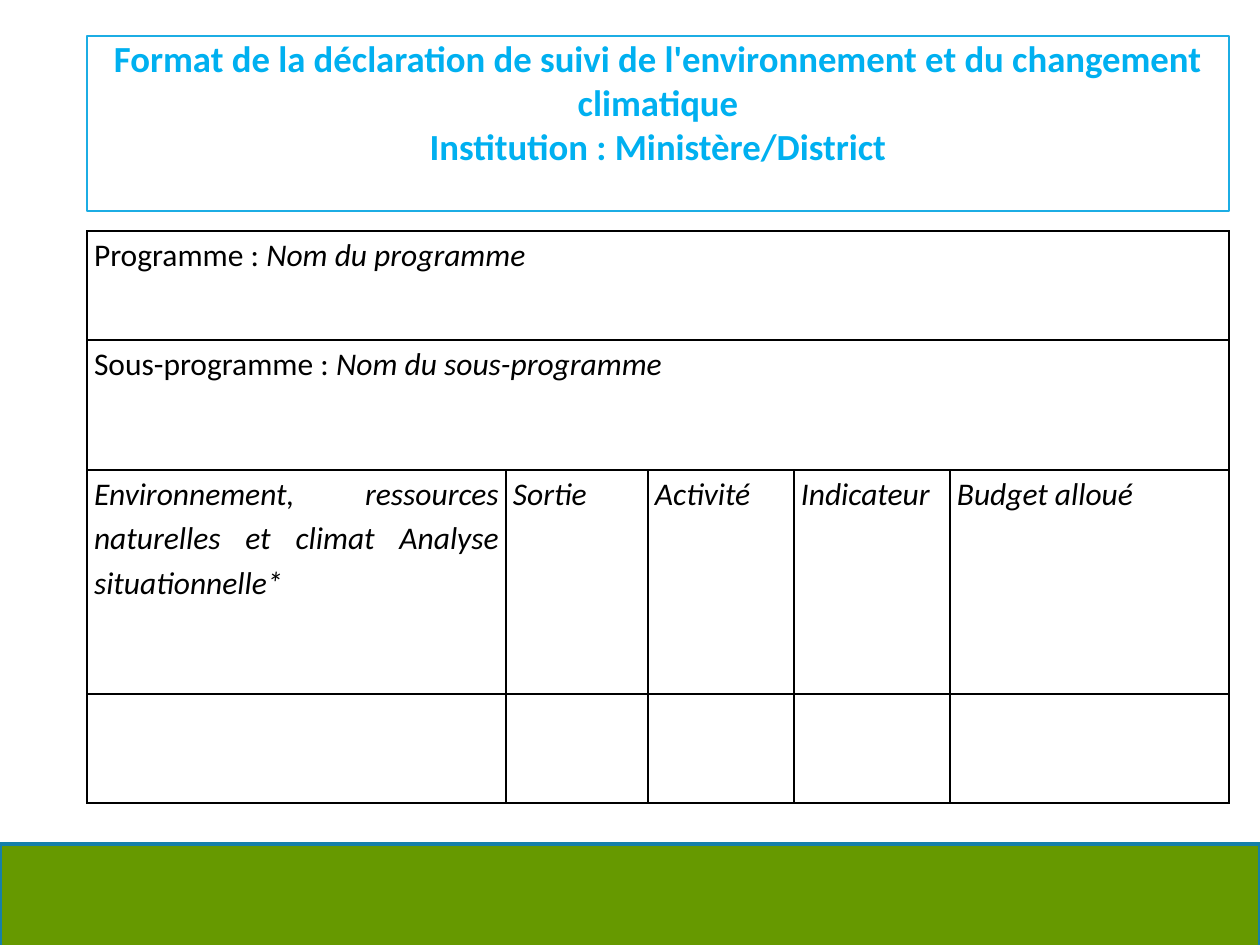
from dataclasses import dataclass

from lxml import etree
from pptx import Presentation, util as u
from pptx.dml.color import RGBColor
from pptx.enum import shapes, text
from pptx.oxml import ns

PX = 914400 / 126
FONT = "Calibri"
COLORS = {
    "heading": "00B0F0",
    "frame": "1CADE4",
    "ink": "000000",
    "band": "669900",
    "band_edge": "1580A9",
}
COLUMNS = [419, 142, 146, 156, 279]
ROWS = [109, 130, 224, 109]


@dataclass(frozen=True)
class Box:
    left: int
    top: int
    width: int
    height: int

    def emu(self) -> list[int]:
        return [px(n) for n in (self.left, self.top, self.width, self.height)]


@dataclass(frozen=True)
class Entry:
    """Cell wording: an upright label, then an italic value."""
    row: int
    column: int
    label: str
    value: str
    span: int = 1


HEADINGS = [
    "Environnement, ressources naturelles et climat Analyse situationnelle*",
    "Sortie",
    "Activité",
    "Indicateur",
    "Budget alloué",
]
ENTRIES = [
    Entry(0, 0, "Programme : ", "Nom du programme", len(COLUMNS)),
    Entry(1, 0, "Sous-programme : ", "Nom du sous-programme", len(COLUMNS)),
    *(Entry(2, column, "", heading) for column, heading in enumerate(HEADINGS)),
]


def px(n: int) -> int:
    return round(n * PX)


def rgb(key: str) -> RGBColor:
    return RGBColor.from_string(COLORS[key])


def add_run(paragraph, wording: str, size: int, color: str,
            bold: bool = False, italic: bool = False) -> None:
    run = paragraph.add_run()
    run.text = wording
    font = run.font
    font.name, font.size = FONT, u.Pt(size)
    font.bold, font.italic = bold, italic
    font.color.rgb = rgb(color)


def set_line(line, color: str, points: float) -> None:
    line.color.rgb = rgb(color)
    line.width = u.Pt(points)


def add_title(slide, box: Box, lines: list[str]) -> None:
    title = slide.shapes.add_textbox(*box.emu())
    set_line(title.line, "frame", 0.75)
    frame = title.text_frame
    frame.word_wrap = True
    frame.vertical_anchor = text.MSO_ANCHOR.TOP
    frame.margin_left = frame.margin_right = frame.margin_top = frame.margin_bottom = 0
    paragraph = frame.paragraphs[0]
    paragraph.alignment = text.PP_ALIGN.CENTER
    for index, line in enumerate(lines):
        if index:
            paragraph.add_line_break()
        add_run(paragraph, line, 21, "heading", bold=True)


def style_cell(cell) -> None:
    """Give the cell four black borders, no fill and the form's margins."""
    properties = cell._tc.get_or_add_tcPr()
    for side in ("lnL", "lnR", "lnT", "lnB"):
        border = etree.SubElement(properties, ns.qn(f"a:{side}"), w=str(u.Pt(1)))
        fill = etree.SubElement(border, ns.qn("a:solidFill"))
        etree.SubElement(fill, ns.qn("a:srgbClr"), val=COLORS["ink"])
    cell.fill.background()
    cell.margin_left = cell.margin_right = px(7)
    cell.margin_top = cell.margin_bottom = 0


def add_form(slide, left: int, top: int) -> None:
    box = Box(left, top, sum(COLUMNS), sum(ROWS))
    form = slide.shapes.add_table(len(ROWS), len(COLUMNS), *box.emu()).table
    form.first_row = form.horz_banding = False
    for column, width in zip(form.columns, COLUMNS):
        column.width = px(width)
    for row, height in zip(form.rows, ROWS):
        row.height = px(height)
    for cell in form.iter_cells():
        style_cell(cell)
    for entry in ENTRIES:
        cell = form.cell(entry.row, entry.column)
        if entry.span > 1:
            cell.merge(form.cell(entry.row, entry.column + entry.span - 1))
        paragraph = cell.text_frame.paragraphs[0]
        paragraph.alignment = text.PP_ALIGN.JUSTIFY
        paragraph.line_spacing = 1.15
        if entry.label:
            add_run(paragraph, entry.label, 18, "ink")
        add_run(paragraph, entry.value, 18, "ink", italic=True)


def add_band(slide, box: Box) -> None:
    band = slide.shapes.add_shape(shapes.MSO_SHAPE.RECTANGLE, *box.emu())
    band.shadow.inherit = False
    band.fill.solid()
    band.fill.fore_color.rgb = rgb("band")
    set_line(band.line, "band_edge", 2)


def main() -> None:
    deck = Presentation()
    deck.slide_width, deck.slide_height = px(1260), px(945)
    slide = deck.slides.add_slide(deck.slide_layouts[6])
    add_title(slide, Box(87, 36, sum(COLUMNS), 175), [
        "Format de la déclaration de suivi de l'environnement et du changement climatique",
        "Institution : Ministère/District",
    ])
    add_form(slide, 87, 231)
    add_band(slide, Box(0, 844, 1260, 108))
    deck.save("out.pptx")


if __name__ == "__main__":
    main()
